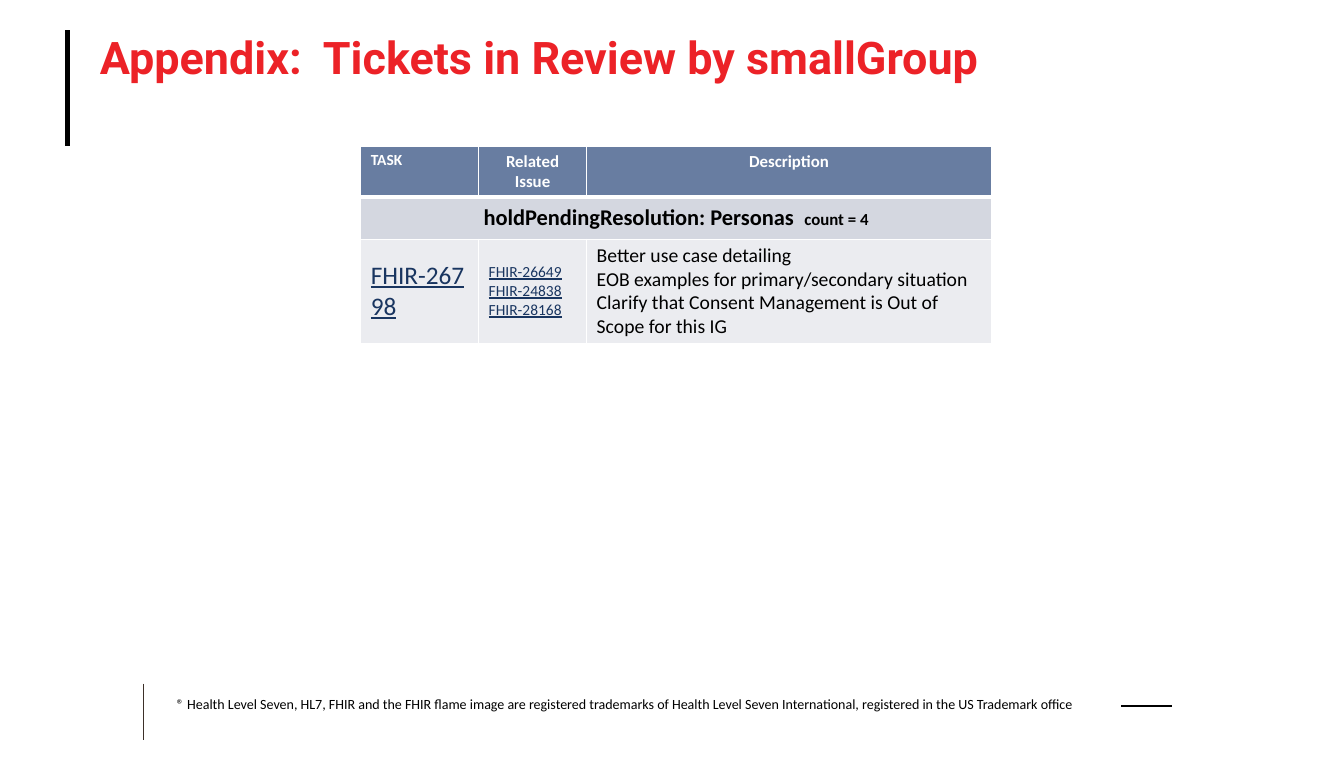
from lxml.etree import SubElement
from pptx import Presentation
from pptx.dml.color import RGBColor
from pptx.enum.shapes import MSO_CONNECTOR
from pptx.enum.text import MSO_ANCHOR, MSO_AUTO_SIZE, PP_ALIGN
from pptx.oxml.ns import qn
from pptx.util import Pt

BLACK = RGBColor(0x00, 0x00, 0x00)
WHITE = RGBColor(0xFF, 0xFF, 0xFF)
RED = RGBColor(0xEC, 0x22, 0x27)
BROWN = RGBColor(0x3D, 0x30, 0x29)
LINK_BLUE = RGBColor(0x19, 0x35, 0x60)
HEADER_BLUE = RGBColor(0x68, 0x7D, 0xA1)
GROUP_GREY = RGBColor(0xD4, 0xD7, 0xE0)
ROW_GREY = RGBColor(0xEB, 0xEC, 0xF0)


class SlideBuilder:
    """Holds the text style and the slide being filled."""

    title_font = "Roboto"
    body_font = "Calibri"

    def __init__(self, page):
        self.page = page

    def add_span(self, para, text, size, color=BLACK, bold=False,
                 underline=False, font=body_font):
        span = para.add_run()
        span.text = text
        span.font.name = font
        span.font.size = Pt(size)
        span.font.color.rgb = color
        span.font.bold = bold
        span.font.underline = underline

    def place_title(self, text, left, top, width, height):
        title = self.page.shapes.title
        title.left, title.top = Pt(left), Pt(top)
        title.width, title.height = Pt(width), Pt(height)
        frame = title.text_frame
        frame.word_wrap = True
        frame.auto_size = MSO_AUTO_SIZE.NONE
        frame.vertical_anchor = MSO_ANCHOR.TOP
        para = frame.paragraphs[0]
        para.alignment = PP_ALIGN.LEFT
        para.line_spacing = 0.9
        properties = para._p.get_or_add_pPr()
        properties.set("marL", str(Pt(27)))
        properties.set("indent", str(Pt(-27)))
        self.add_span(para, text, 32, RED, bold=True, font=self.title_font)

    def add_text(self, text, left, top, width, height, size):
        box = self.page.shapes.add_textbox(Pt(left), Pt(top), Pt(width), Pt(height))
        box.text_frame.word_wrap = True
        self.add_span(box.text_frame.paragraphs[0], text, size)

    def add_line(self, start, end, color, weight):
        line = self.page.shapes.add_connector(
            MSO_CONNECTOR.STRAIGHT, *map(Pt, start + end))
        line.line.color.rgb = color
        line.line.width = Pt(weight)
        SubElement(line._element.spPr, qn("a:effectLst"))

    def add_table(self, left, top, widths, heights):
        frame = self.page.shapes.add_table(
            len(heights), len(widths), Pt(left), Pt(top),
            Pt(sum(widths)), Pt(sum(heights)))
        table = frame.table
        for column, width in zip(table.columns, widths):
            column.width = Pt(width)
        for row, height in zip(table.rows, heights):
            row.height = Pt(height)
        return table

    def style_cell(self, cell, fill, bottom, margin):
        cell.margin_top = cell.margin_bottom = Pt(margin)
        properties = cell._tc.get_or_add_tcPr()
        for side, weight in (("L", 1), ("R", 1), ("T", 1), ("B", bottom)):
            border = SubElement(properties, qn(f"a:ln{side}"), w=str(Pt(weight)))
            paint = SubElement(border, qn("a:solidFill"))
            SubElement(paint, qn("a:srgbClr"), val=str(WHITE))
        cell.fill.solid()
        cell.fill.fore_color.rgb = fill

    def fill_cell(self, cell, lines, size, color=BLACK, bold=False,
                  underline=False, align=PP_ALIGN.LEFT, anchor=MSO_ANCHOR.MIDDLE):
        cell.vertical_anchor = anchor
        frame = cell.text_frame
        for index, text in enumerate(lines):
            para = frame.add_paragraph() if index else frame.paragraphs[0]
            para.alignment = align
            self.add_span(para, text, size, color, bold, underline)


def main():
    deck = Presentation()
    deck.slide_width, deck.slide_height = Pt(957.6), Pt(540)
    builder = SlideBuilder(deck.slides.add_slide(deck.slide_layouts[5]))

    # Frame lines
    builder.add_line((48, 21.5), (48, 104), BLACK, 3.25)
    builder.add_line((102.5, 487), (102.5, 527), BROWN, 0.5)
    builder.add_line((799, 503), (835, 503), BLACK, 1)

    # Title
    builder.place_title("Appendix:  Tickets in Review by smallGroup",
                        64, 21.5, 862, 82)

    # Ticket table
    table = builder.add_table(257, 104, (84, 77, 288.5), (34.5, 30, 74))
    row_styles = ((HEADER_BLUE, 3, 3.6), (GROUP_GREY, 1, 3.6), (ROW_GREY, 1, 2.7))
    for row, (fill, bottom, margin) in zip(table.rows, row_styles):
        for cell in row.cells:
            builder.style_cell(cell, fill, bottom, margin)

    # Header row
    headings = (("TASK", 11, PP_ALIGN.LEFT),
                ("Related Issue", 12, PP_ALIGN.CENTER),
                ("Description", 12, PP_ALIGN.CENTER))
    for column, (heading, size, align) in enumerate(headings):
        builder.fill_cell(table.cell(0, column), [heading], size, WHITE,
                          bold=True, align=align, anchor=MSO_ANCHOR.TOP)

    # Group row
    group = table.cell(1, 0)
    group.merge(table.cell(1, 2))
    builder.fill_cell(group, ["holdPendingResolution: Personas  "], 16,
                      bold=True, align=PP_ALIGN.CENTER)
    builder.add_span(group.text_frame.paragraphs[0], "count = 4", 12, bold=True)

    # Ticket row
    builder.fill_cell(table.cell(2, 0), ["FHIR-26798"], 18, LINK_BLUE, underline=True)
    builder.fill_cell(table.cell(2, 1), ["FHIR-26649", "FHIR-24838", "FHIR-28168"],
                      11, LINK_BLUE, underline=True)
    builder.fill_cell(table.cell(2, 2), [
        "Better use case detailing",
        "EOB examples for primary/secondary situation",
        "Clarify that Consent Management is Out of Scope for this IG",
    ], 14)

    # Trademark line
    builder.add_text(
        "® Health Level Seven, HL7, FHIR and the FHIR flame image are registered "
        "trademarks of Health Level Seven International, registered in the US "
        "Trademark office", 119, 492, 726, 19.5, 10)

    deck.save("out.pptx")


if __name__ == "__main__":
    main()
